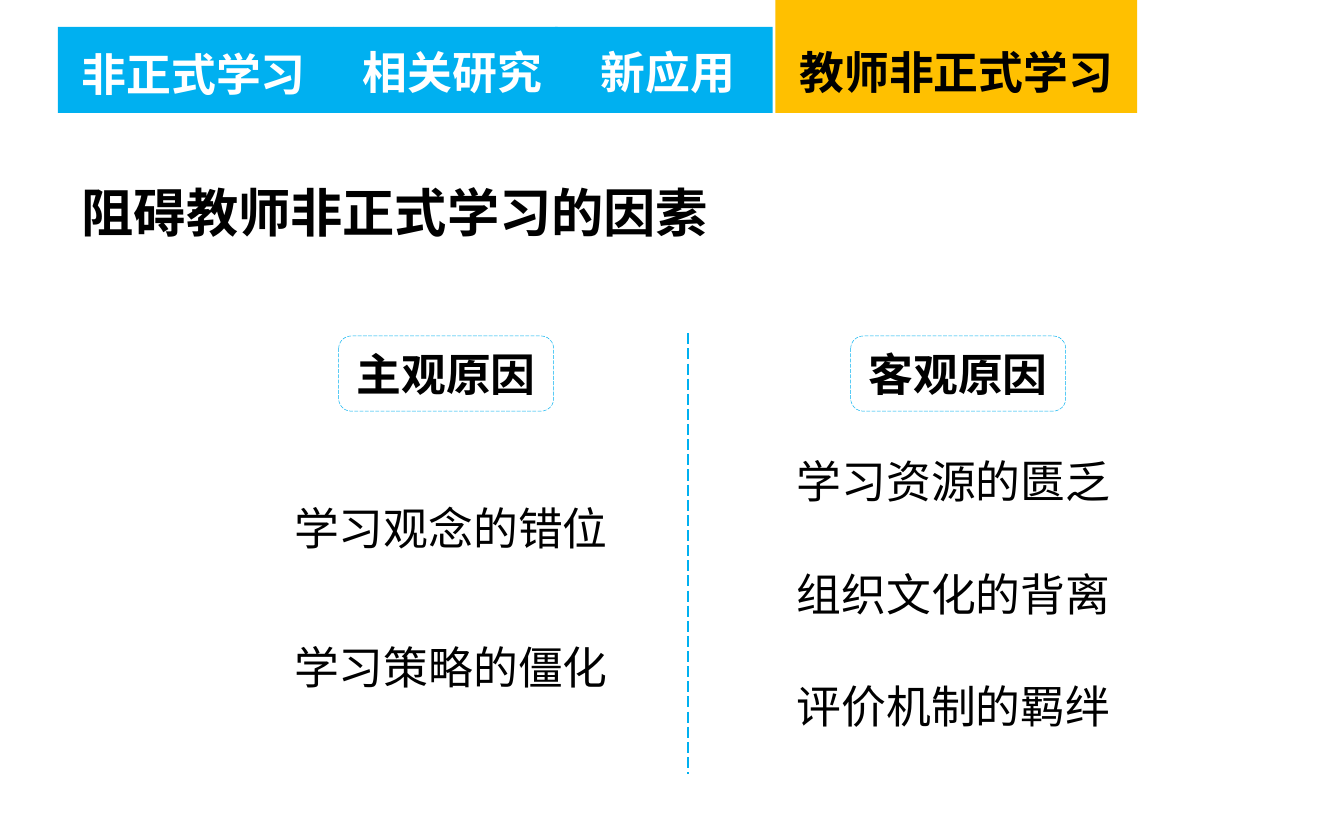
from typing import NamedTuple

from lxml import etree
from pptx import Presentation
from pptx import util as u
from pptx.dml.color import RGBColor
from pptx.enum import dml, shapes, text
from pptx.oxml.ns import qn

PX = 9144  # 100 px to the inch


class Theme(NamedTuple):
    font: str = "Noto Sans CJK SC"
    blue: str = "00B0F0"
    amber: str = "FFC000"
    white: str = "FFFFFF"
    black: str = "000000"
    title_size: int = 28
    body_size: int = 24


class Box(NamedTuple):
    left: int
    top: int
    width: int
    height: int


class Tab(NamedTuple):
    label: str
    area: Box
    label_area: Box
    fill: str
    color: str
    wrap: bool


class Cause(NamedTuple):
    heading: str
    heading_left: int
    factors_left: int
    factor_tops: tuple[int, ...]
    factors: tuple[str, ...]


THEME = Theme()
TABS = [
    Tab("新应用", Box(413, 20, 162, 64), Box(437, 28, 126, 50),
        THEME.blue, THEME.white, True),
    Tab("相关研究", Box(248, 20, 167, 64), Box(260, 28, 155, 50),
        THEME.blue, THEME.white, False),
    Tab("非正式学习", Box(43, 20, 205, 64), Box(51, 30, 188, 50),
        THEME.blue, THEME.white, False),
    Tab("教师非正式学习", Box(577, -1, 269, 85), Box(585, 28, 263, 50),
        THEME.amber, THEME.black, True),
]
CAUSES = [
    Cause("主观原因", 252, 209, (368, 471),
          ("学习观念的错位", "学习策略的僵化")),
    Cause("客观原因", 633, 583, (333, 417, 500),
          ("学习资源的匮乏", "组织文化的背离", "评价机制的羁绊")),
]


def rgb(color: str) -> RGBColor:
    return RGBColor.from_string(color)


def emu(box: Box) -> list[int]:
    return [side * PX for side in box]


def write(frame, words: str, *, size: int = THEME.body_size,
          color: str = THEME.black, bold: bool = False, wrap: bool = False,
          align=text.PP_ALIGN.LEFT) -> None:
    frame.word_wrap = wrap
    frame.auto_size = text.MSO_AUTO_SIZE.SHAPE_TO_FIT_TEXT
    paragraph = frame.paragraphs[0]
    paragraph.alignment = align
    run = paragraph.add_run()
    run.text = words
    run.font.size = u.Pt(size)
    run.font.bold = bold
    run.font.color.rgb = rgb(color)
    run.font.name = THEME.font
    # Chinese characters take the East Asian typeface
    etree.SubElement(run.font._element, qn("a:ea"), typeface=THEME.font)


def add_label(slide, area: Box, words: str, **style) -> None:
    write(slide.shapes.add_textbox(*emu(area)).text_frame, words, **style)


def add_block(slide, kind, area: Box, fill: str):
    block = slide.shapes.add_shape(kind, *emu(area))
    block.shadow.inherit = False
    block.fill.solid()
    block.fill.fore_color.rgb = rgb(fill)
    block.line.fill.background()
    return block


def dash(line, width: float) -> None:
    line.color.rgb = rgb(THEME.blue)
    line.width = u.Pt(width)
    line.dash_style = dml.MSO_LINE.LONG_DASH


def add_tabs(slide) -> None:
    for tab in TABS:
        add_block(slide, shapes.MSO_SHAPE.RECTANGLE, tab.area, tab.fill)
    for tab in TABS:
        add_label(slide, tab.label_area, tab.label, color=tab.color,
                  bold=True, wrap=tab.wrap)


def add_cause(slide, cause: Cause) -> None:
    heading = add_block(slide, shapes.MSO_SHAPE.ROUNDED_RECTANGLE,
                        Box(cause.heading_left, 250, 160, 56), THEME.white)
    dash(heading.line, 0.25)
    write(heading.text_frame, cause.heading, bold=True,
          align=text.PP_ALIGN.CENTER)
    for top, factor in zip(cause.factor_tops, cause.factors):
        add_label(slide, Box(cause.factors_left, top, 256, 50), factor)


def add_divider(slide) -> None:
    divider = slide.shapes.add_connector(
        shapes.MSO_CONNECTOR.STRAIGHT, 512 * PX, 248 * PX, 512 * PX, 576 * PX)
    dash(divider.line, 0.75)
    etree.SubElement(divider._element.spPr, qn("a:effectLst"))


def main() -> None:
    deck = Presentation()
    deck.slide_width, deck.slide_height = 1000 * PX, 625 * PX
    slide = deck.slides.add_slide(deck.slide_layouts[6])
    add_tabs(slide)
    add_label(slide, Box(51, 129, 491, 57), "阻碍教师非正式学习的因素",
              size=THEME.title_size, bold=True)
    for cause in CAUSES:
        add_cause(slide, cause)
    add_divider(slide)
    deck.save("out.pptx")


if __name__ == "__main__":
    main()
